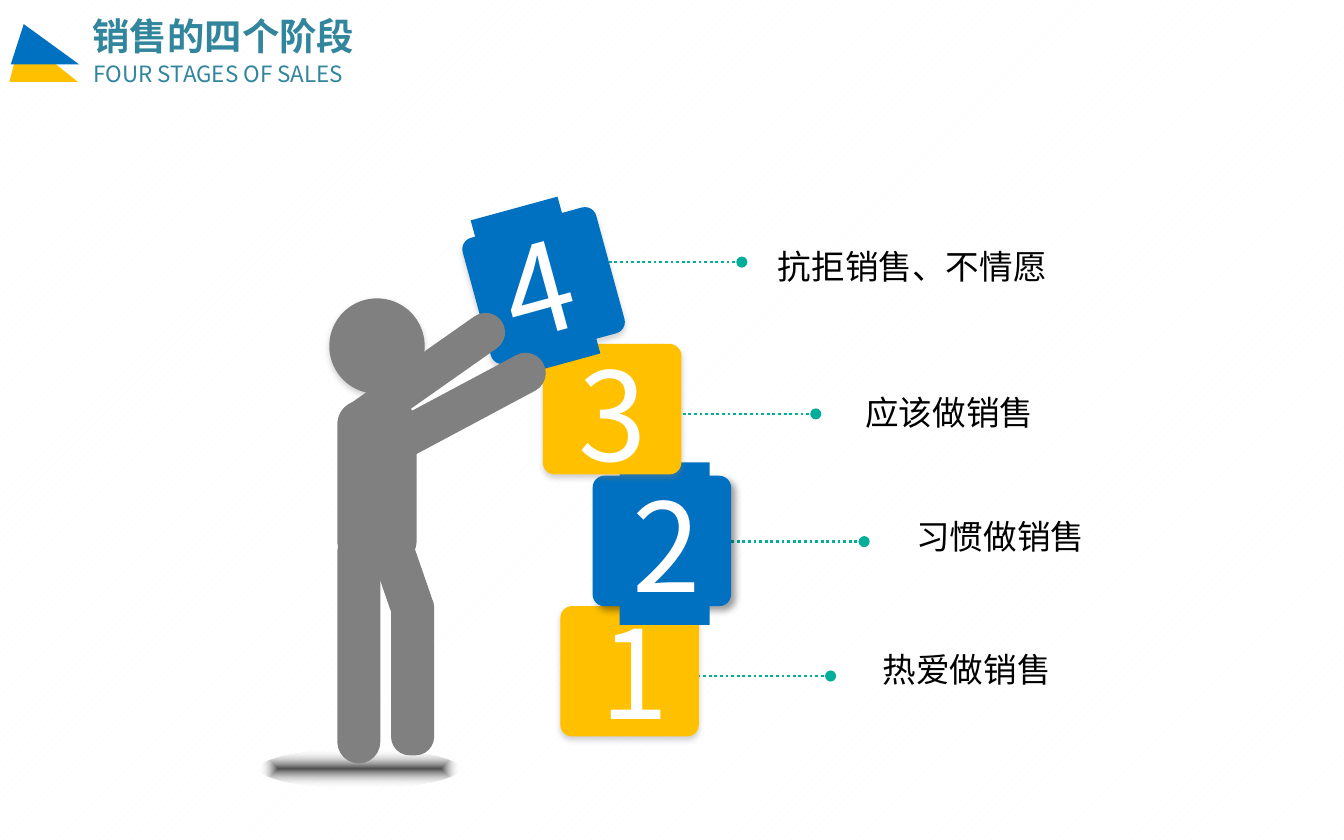
from dataclasses import dataclass

from pptx import Presentation
from pptx.dml.color import RGBColor
from pptx.enum.dml import MSO_LINE_DASH_STYLE as Dash, MSO_PATTERN_TYPE as Pattern
from pptx.enum.shapes import MSO_CONNECTOR_TYPE as Connector, MSO_SHAPE as Shape
from pptx.enum.text import MSO_ANCHOR as Anchor
from pptx.oxml import parse_xml
from pptx.oxml.ns import nsdecls, qn
from pptx.util import Inches, Pt


@dataclass(frozen=True)
class Theme:
    """Colours, font and type sizes of the slide."""
    blue: str = "0070C0"
    yellow: str = "FFC000"
    teal: str = "02AE9A"
    heading: str = "31859C"
    grey: str = "808080"
    ink: str = "000000"
    white: str = "FFFFFF"
    hatch: str = "FBFBFB"
    ground: str = "171717"
    font: str = "Noto Sans CJK SC"
    title: int = 20
    subtitle: int = 12
    label: int = 18
    digit: int = 66


@dataclass(frozen=True)
class Box:
    """A rectangle measured in grid columns and rows."""
    left: float
    top: float
    width: float
    height: float

    def inner(self, left, top, width, height):
        """Return a box whose position counts from this one."""
        return Box(self.left + left, self.top + top, width, height)

    def emu(self):
        """Return the position and size in slide units."""
        return [cells(n) for n in (self.left, self.top, self.width, self.height)]


@dataclass(frozen=True)
class Stage:
    """One numbered block with its leader line and label."""
    number: str
    label: str
    block: tuple
    digit: tuple
    leader: tuple
    label_at: tuple
    label_width: float
    fill: str
    plate: bool = False
    turn: float = 0
    shadow: tuple = (Theme.grey, 35, 3.1, 1.8, 90)


COLUMNS, ROWS, CELL = 100, 62.5, 0.1
BLOCK = (10.3, 9.7)
DIGIT = (6.7, 12.1)
LEADER = 9.9
STAGES = [
    Stage("1", "热爱做销售", (6.4, 29.8), (2, -1.3), (16.6, 35), (29.4, 32.5), 14.6, Theme.yellow),
    Stage("2", "习惯做销售", (8.8, 20.1), (2, -1), (19.1, 25), (31.9, 22.6), 14.6, Theme.blue,
          True, 0, (Theme.ink, 40, 4, 3, 45)),
    Stage("3", "应该做销售", (5.1, 10.3), (1.7, -1), (15.5, 15.5), (28.1, 13.4), 14.6, Theme.yellow),
    Stage("4", "抗拒销售、不情愿", (0, 1.1), (1.2, -1.1), (10, 4.2), (21.6, 2.5), 22.2, Theme.blue,
          True, -15.3),
]


def cells(count):
    """Convert grid cells to slide units."""
    return Inches(count * CELL)


def colour(code):
    """Turn a hex code into a colour."""
    return RGBColor.from_string(code)


def add_shape(slide, kind, box, fill, adjust=None, turn=0, shadow=None):
    """Add a filled preset shape, with an outer shadow if one is given."""
    shape = slide.shapes.add_shape(kind, *box.emu())
    shape.shadow.inherit = False
    shape.fill.solid()
    shape.fill.fore_color.rgb = colour(fill)
    shape.line.fill.background()
    shape.rotation = turn
    if adjust is not None:
        shape.adjustments[0] = adjust
    if shadow:
        tint, alpha, blur, distance, angle = shadow
        shape._element.spPr.find(qn("a:effectLst")).append(parse_xml(
            f'<a:outerShdw {nsdecls("a")} blurRad="{Pt(blur)}" dist="{Pt(distance)}" '
            f'dir="{angle * 60000}" algn="ctr" rotWithShape="0"><a:srgbClr val="{tint}">'
            f'<a:alpha val="{alpha * 1000}"/></a:srgbClr></a:outerShdw>'))
    return shape


def add_text(slide, box, text, size, tint, bold=False, wrap=False, anchor=Anchor.TOP):
    """Add a text box holding one run."""
    shape = slide.shapes.add_textbox(*box.emu())
    frame = shape.text_frame
    frame.word_wrap = wrap
    frame.vertical_anchor = anchor
    run = frame.paragraphs[0].add_run()
    run.text = text
    run.font.size = Pt(size)
    run.font.bold = bold
    run.font.name = Theme.font
    run.font.color.rgb = colour(tint)
    run.font._element.find(qn("a:latin")).addnext(
        parse_xml(f'<a:ea {nsdecls("a")} typeface="{Theme.font}"/>'))
    return shape


def add_leader(slide, box):
    """Add a dotted line that ends in a dot."""
    left, top, width, _ = box.emu()
    connector = slide.shapes.add_connector(Connector.STRAIGHT, left, top, left + width, top)
    connector.line.color.rgb = colour(Theme.teal)
    connector.line.width = Pt(1.5)
    connector.line.dash_style = Dash.ROUND_DOT
    properties = connector._element.spPr
    properties.find(qn("a:ln")).append(parse_xml(f'<a:tailEnd {nsdecls("a")} type="oval"/>'))
    properties.append(parse_xml(f'<a:effectLst {nsdecls("a")}/>'))


def draw_backdrop(slide):
    """Fill the background with a faint diagonal hatch."""
    fill = slide.background.fill
    fill.patterned()
    fill.pattern = Pattern.WIDE_UPWARD_DIAGONAL
    fill.fore_color.rgb = colour(Theme.hatch)
    fill.back_color.rgb = colour(Theme.white)


def draw_header(slide, box):
    """Draw the two-triangle mark, the title and the subtitle."""
    add_text(slide, box.inner(5.2, 0, 21.7, 4.4), "销售的四个阶段", Theme.title, Theme.heading, True)
    add_text(slide, box.inner(5.3, 3.5, 21.4, 3), "FOUR STAGES OF SALES", Theme.subtitle, Theme.heading)
    add_shape(slide, Shape.ISOSCELES_TRIANGLE, box.inner(0, 2.2, 5.1, 3.4), Theme.yellow, 0.17)
    add_shape(slide, Shape.ISOSCELES_TRIANGLE, box.inner(0.1, 1.3, 5.1, 3), Theme.blue, 0.19)


def draw_stages(slide, box):
    """Draw the leaders, the stacked blocks and the labels."""
    for stage in STAGES:
        add_leader(slide, box.inner(*stage.leader, LEADER, 0))
    for stage in STAGES:
        block = box.inner(*stage.block, *BLOCK)
        add_shape(slide, Shape.ROUNDED_RECTANGLE, block, stage.fill, 0.09, stage.turn, stage.shadow)
        digit = add_text(slide, block.inner(*stage.digit, *DIGIT), stage.number, Theme.digit,
                         Theme.white, wrap=True, anchor=Anchor.MIDDLE)
        digit.rotation = stage.turn
        if stage.plate:
            digit.fill.solid()
            digit.fill.fore_color.rgb = colour(stage.fill)
        add_text(slide, box.inner(*stage.label_at, stage.label_width, 4), stage.label,
                 Theme.label, Theme.ink)


def draw_figure(slide, box):
    """Draw the standing person and the shade on the ground."""
    shade = add_shape(slide, Shape.OVAL, box.inner(0, 34.9, 14.9, 2.8), Theme.ground)
    properties = shade._element.spPr
    properties.replace(properties.find(qn("a:solidFill")), parse_xml(
        f'<a:gradFill {nsdecls("a")} rotWithShape="1"><a:gsLst>'
        f'<a:gs pos="0"><a:srgbClr val="{Theme.ground}"><a:alpha val="76000"/></a:srgbClr></a:gs>'
        f'<a:gs pos="100000"><a:srgbClr val="{Theme.white}"><a:alpha val="0"/></a:srgbClr></a:gs>'
        '</a:gsLst><a:path path="shape"><a:fillToRect l="50000" t="50000" r="50000" b="50000"/>'
        '</a:path></a:gradFill>'))
    add_shape(slide, Shape.OVAL, box.inner(5.2, 1.3, 7.1, 7.1), Theme.grey,
              shadow=(Theme.grey, 35, 3.1, 1.8, 90))
    limbs = [
        ((10.8, 0, 2.9, 14.1), 0.5, 54.9),
        ((5.8, 8.9, 5.9, 12.2), 0.3, 0),
        ((5.8, 18.5, 3.2, 17.4), 0.5, 0),
        ((9, 18.7, 3.2, 6.7), 0.41, -19.1),
        ((13.9, 2.7, 3, 13), 0.5, 241.9),
        ((9.8, 22.9, 3.2, 12.4), 0.43, 0),
    ]
    for place, rounding, turn in limbs:
        add_shape(slide, Shape.ROUNDED_RECTANGLE, box.inner(*place), Theme.grey, rounding, turn)


def main():
    """Build the slide and save it."""
    presentation = Presentation()
    presentation.slide_width, presentation.slide_height = cells(COLUMNS), cells(ROWS)
    slide = presentation.slides.add_slide(presentation.slide_layouts[6])
    draw_backdrop(slide)
    draw_header(slide, Box(0.7, 0.5, 27, 6.5))
    draw_stages(slide, Box(35.3, 15.3, 46.5, 39.5))
    draw_figure(slide, Box(19.3, 20.9, 21.5, 37.7))
    presentation.save("out.pptx")


if __name__ == "__main__":
    main()
